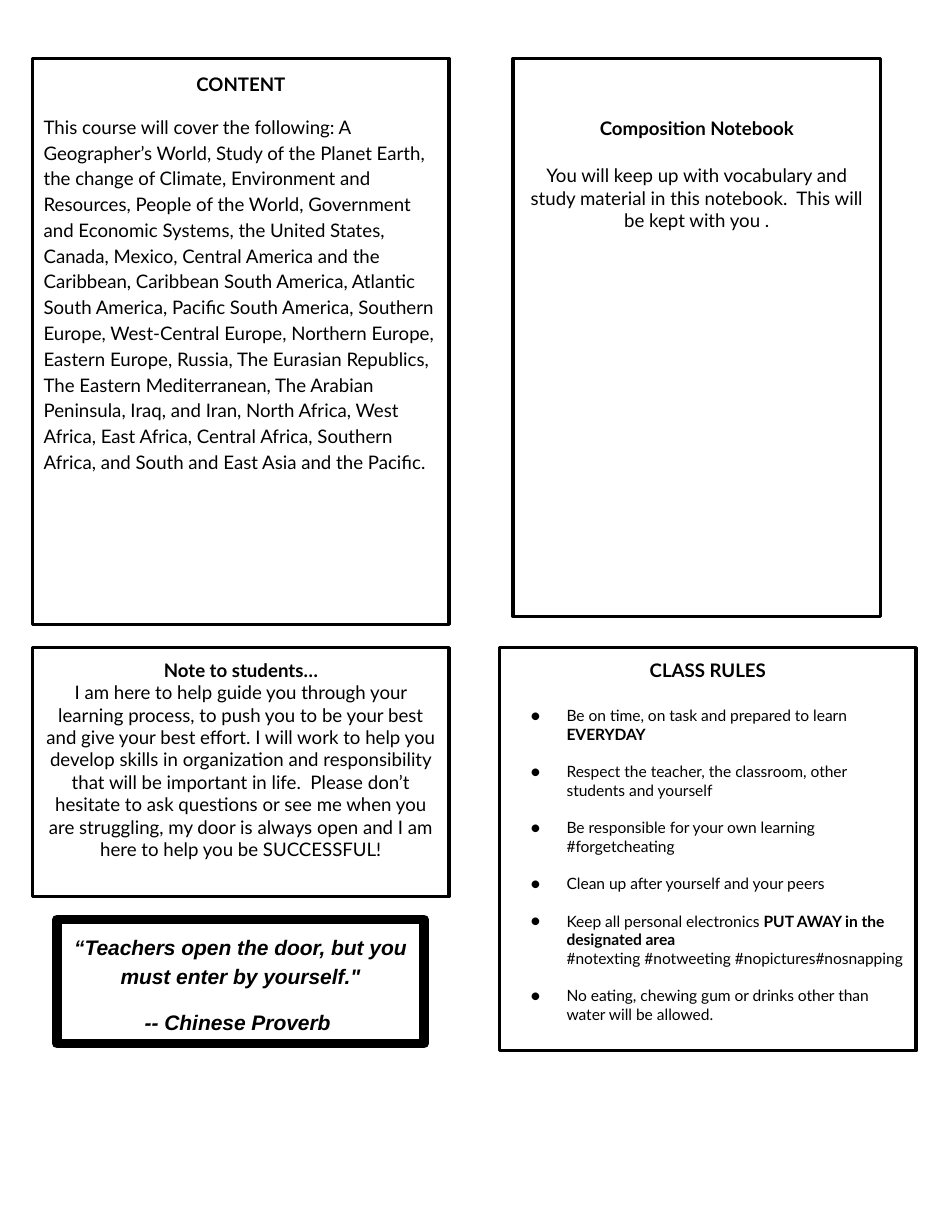
import pptx
import pptx.dml.color
import pptx.enum.shapes
import pptx.enum.text
import pptx.util
from lxml import etree
from pptx.oxml.ns import qn

Cm, Pt = pptx.util.Cm, pptx.util.Pt
ALIGN = pptx.enum.text.PP_ALIGN
COLORS = {"ink": "000000"}
INK = pptx.dml.color.RGBColor.from_string(COLORS["ink"])
LEFT, RIGHT = 0.74, 11.33
TOP, MIDDLE = 1.33, 14.69
PANEL_W, NARROW_W = 9.45, 8.33
INSET, INDENT, HANG = 0.25, 1.27, 0.81


def add_text(tf, text, size=12, font="Lato", bold=False, italic=False,
             align=ALIGN.LEFT, before=0, spacing=1.0, indent=0, bullet=False, tail=None):
    """Add a paragraph; tail is closing text with the opposite weight."""
    p = tf.paragraphs[0]
    if p.runs:
        p = tf.add_paragraph()
    p.alignment, p.space_before, p.line_spacing = align, Pt(before), spacing
    pPr = p._p.get_or_add_pPr()
    pPr.set("marL", str(Cm(indent)))
    pPr.set("indent", str(-Cm(HANG) if bullet else 0))
    if bullet:
        color = etree.SubElement(pPr, qn("a:buClr"))
        etree.SubElement(color, qn("a:srgbClr"), val=COLORS["ink"])
        etree.SubElement(pPr, qn("a:buFont"), typeface=font)
        etree.SubElement(pPr, qn("a:buChar"), char="●")
    for content, weight in ((text, bold), (tail, not bold)):
        if content:
            r = p.add_run()
            r.text = content
            r.font.name, r.font.size = font, Pt(size)
            r.font.bold, r.font.italic = weight, italic
            r.font.color.rgb = INK


prs = pptx.Presentation()
prs.slide_width, prs.slide_height = Cm(21.59), Cm(27.94)
s = prs.slides.add_slide(prs.slide_layouts[6])

# Framed panels: left, top, width, height, line width
panels = {
    "content": (LEFT, TOP, PANEL_W, 12.83, 2.25),
    "rules": (RIGHT, MIDDLE, PANEL_W, 9.14, 2.25),
    "note": (LEFT, MIDDLE, PANEL_W, 5.64, 2.25),
    "proverb": (1.29, 20.85, NARROW_W, 2.82, 6),
    "notebook": (11.64, TOP, NARROW_W, 12.65, 2.25),
}
frames = {}
for key, (x, y, w, h, line) in panels.items():
    sp = s.shapes.add_shape(pptx.enum.shapes.MSO_SHAPE.RECTANGLE, Cm(x), Cm(y), Cm(w), Cm(h))
    sp.shadow.inherit = False
    sp.fill.background()
    sp.line.color.rgb = INK
    sp.line.width = Pt(line)
    tf = frames[key] = sp.text_frame
    tf.word_wrap = True
    tf.vertical_anchor = pptx.enum.text.MSO_ANCHOR.TOP
    tf.margin_left = tf.margin_right = tf.margin_top = tf.margin_bottom = Cm(INSET)

# Content
tf = frames["content"]
add_text(tf, "CONTENT", bold=True, align=ALIGN.CENTER, spacing=1.15)
add_text(tf, "This course will cover the following: A Geographer’s World, Study of the "
         "Planet Earth, the change of Climate, Environment and Resources, People of the "
         "World, Government and Economic Systems, the United States, Canada, Mexico, "
         "Central America and the Caribbean, Caribbean South America, Atlantic South "
         "America, Pacific South America, Southern Europe, West-Central Europe, Northern "
         "Europe, Eastern Europe, Russia, The Eurasian Republics, The Eastern "
         "Mediterranean, The Arabian Peninsula, Iraq, and Iran, North Africa, West Africa, "
         "East Africa, Central Africa, Southern Africa, and South and East Asia and the "
         "Pacific.", before=11, spacing=1.15)

# Class rules: text, bold ending, line below
tf = frames["rules"]
rules = [
    ("Be on time, on task and prepared to learn ", "EVERYDAY", None),
    ("Respect the teacher, the classroom, other students and yourself", None, None),
    ("Be responsible for your own learning #forgetcheating", None, None),
    ("Clean up after yourself and your peers", None, None),
    ("Keep all personal electronics ", "PUT AWAY in the designated area",
     "#notexting #notweeting #nopictures#nosnapping"),
    ("No eating, chewing gum or drinks other than water will be allowed.", None, None),
]
add_text(tf, "CLASS RULES", bold=True, align=ALIGN.CENTER)
for i, (rule, ending, below) in enumerate(rules):
    add_text(tf, rule, size=10, before=12 if i else 16, indent=INDENT, bullet=True, tail=ending)
    if below:
        add_text(tf, below, size=10, indent=INDENT)

# Note to students
tf = frames["note"]
add_text(tf, "Note to students…", bold=True, align=ALIGN.CENTER)
add_text(tf, "I am here to help guide you through your learning process, to push you to be "
         "your best and give your best effort. I will work to help you develop skills in "
         "organization and responsibility that will be important in life.  Please don’t "
         "hesitate to ask questions or see me when you are struggling, my door is always "
         "open and I am here to help you be SUCCESSFUL!", align=ALIGN.CENTER)

# Proverb
quote = dict(size=13.5, font="Arial", bold=True, italic=True, align=ALIGN.CENTER, spacing=1.15)
tf = frames["proverb"]
add_text(tf, "“Teachers open the door, but you must enter by yourself.\"", **quote)
add_text(tf, "-- Chinese Proverb ", before=11, **quote)

# Notebook
tf = frames["notebook"]
tf.margin_top = Cm(1.32)
add_text(tf, "Composition Notebook", bold=True, align=ALIGN.CENTER)
add_text(tf, "You will keep up with vocabulary and study material in this notebook.  This "
         "will be kept with you .", align=ALIGN.CENTER, before=16)

prs.save("out.pptx")
